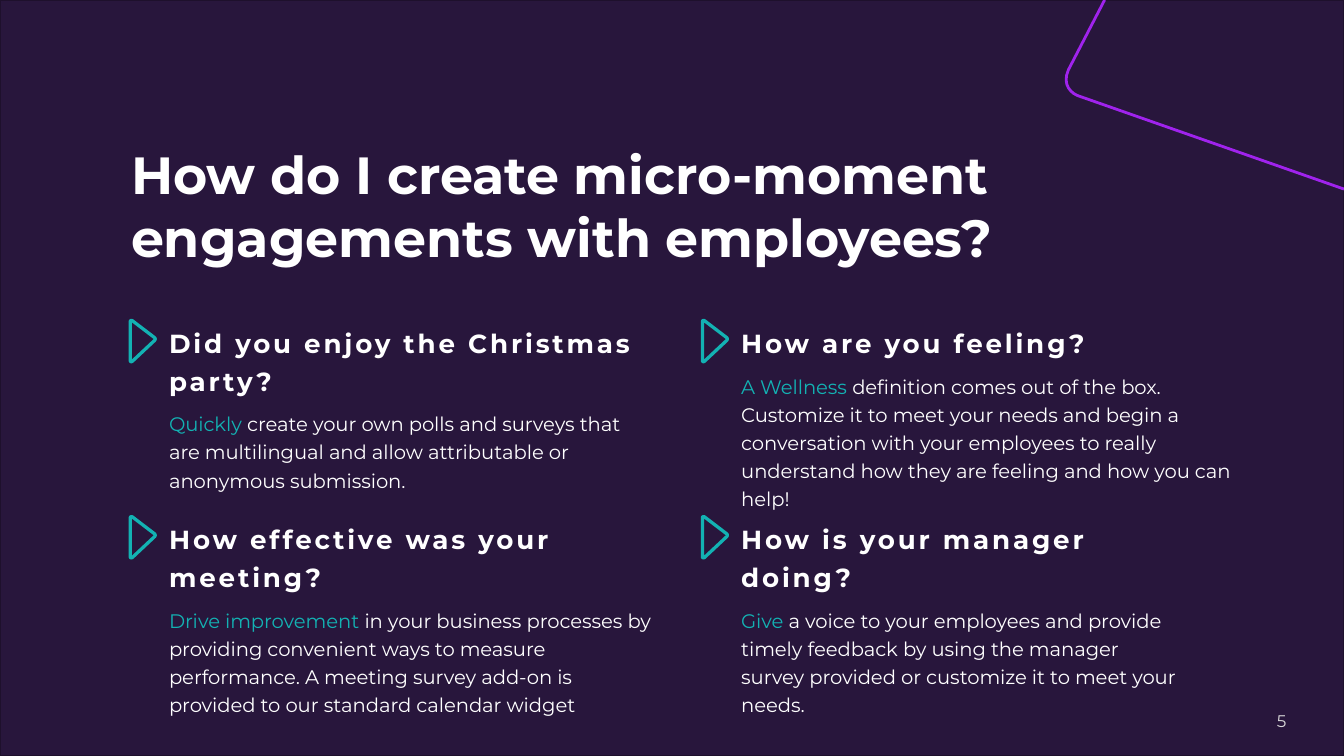
from pptx import Presentation
from pptx.dml.color import RGBColor
from pptx.enum.shapes import MSO_SHAPE
from pptx.enum.text import MSO_ANCHOR, MSO_AUTO_SIZE, PP_ALIGN
from pptx.util import Pt

RECT = MSO_SHAPE.RECTANGLE
GROW = MSO_AUTO_SIZE.SHAPE_TO_FIT_TEXT
MIDDLE = MSO_ANCHOR.MIDDLE
RIGHT = PP_ALIGN.RIGHT

NIGHT = RGBColor(0x28, 0x16, 0x3C)
EDGE = RGBColor(0x1E, 0x10, 0x2C)
VIOLET = RGBColor(0xA0, 0x23, 0xED)
TEAL = RGBColor(0x13, 0xB2, 0xB3)
WHITE = RGBColor(0xFF, 0xFF, 0xFF)
GREY = RGBColor(0xD9, 0xD9, 0xD9)
FONT = "Montserrat"

WIDE, HIGH = 720, 405
TITLE = "How do I create micro-moment engagements with employees?"
PAGE = "5"
CARDS = [
    ("Did you enjoy the Christmas party?", "Quickly\u00a0",
     "create your own polls and surveys that are multilingual and allow "
     "attributable or anonymous submission.", 270.7),
    ("How are you feeling?", "A Wellness ",
     "definition comes out of the box. Customize it to meet your needs and "
     "begin a conversation with your employees to really understand how they "
     "are feeling and how you can help!", 293.8),
    ("How effective was your meeting?", "Drive improvement ",
     "in your business processes by providing convenient ways to measure "
     "performance. A meeting survey add-on is provided to our standard "
     "calendar widget", 276.5),
    ("How is your manager doing?", "Give ",
     "a voice to your employees and provide timely feedback by using the "
     "manager survey provided or customize it to meet your needs.", 250.6),
]
LEFT, TOP = 83.5, 168.5
STEP_X, STEP_Y = 306.5, 105.1
ICON_X, ICON_Y = -13.7, 3

CORNER = [(591.8, 0), (572.4, 37.4),
          (568.8, 45.4, 573.8, 50.4, 578.9, 51.8), (WIDE, 101.3)]
ARROW = [(0, 21.6), (0, 22.5, 0.9, 22.5, 1.6, 21.6), (13, 10.9),
         (13.6, 10.3, 13.3, 9.6, 12.9, 9.3), (1.6, 0.7),
         (0.9, 0, 0, 0, 0, 0.9)]


def trace(steps, count=8):
    points = [steps[0]]
    for step in steps[1:]:
        if len(step) == 2:
            points.append(step)
            continue
        start, ends = points[-1], (step[:2], step[2:4], step[4:])
        for i in range(1, count + 1):
            t = i / count
            u = 1 - t
            points.append(tuple(
                u**3 * a + 3 * u * u * t * b + 3 * u * t * t * c + t**3 * d
                for a, b, c, d in zip(start, *ends)))
    return points


def outline(slide, steps, color, width, x=0, y=0, close=False):
    points = [(Pt(x + a), Pt(y + b)) for a, b in trace(steps)]
    pen = slide.shapes.build_freeform(*points[0])
    pen.add_line_segments(points[1:], close=close)
    shape = pen.convert_to_shape()
    shape.shadow.inherit = False
    shape.fill.background()
    shape.line.color.rgb = color
    shape.line.width = Pt(width)


def add_box(slide, x, y, w, h):
    box = slide.shapes.add_textbox(Pt(x), Pt(y), Pt(w), Pt(h))
    box.text_frame.word_wrap = True
    return box.text_frame


def add_run(para, text, size, color, bold=False):
    run = para.add_run()
    run.text = text
    run.font.name = FONT
    run.font.size = Pt(size)
    run.font.bold = bold
    run.font.color.rgb = color
    return run


def add_card(slide, x, y, head, lead, body, width):
    frame = add_box(slide, x, y, width, 78.5)
    frame.auto_size = GROW
    first, second = frame.paragraphs[0], frame.add_paragraph()
    for para in (first, second):
        para.line_spacing = 1.2
        para.space_after = Pt(6)
    run = add_run(first, head, 14, WHITE, True)
    run.font._element.set("spc", "150")
    add_run(second, lead, 10.5, TEAL)
    add_run(second, body, 10.5, WHITE)
    outline(slide, ARROW, TEAL, 1.75, x + ICON_X, y + ICON_Y, True)


def main():
    deck = Presentation()
    deck.slide_width, deck.slide_height = Pt(WIDE), Pt(HIGH)
    slide = deck.slides.add_slide(deck.slide_layouts[6])

    back = slide.shapes.add_shape(RECT, 0, 0, Pt(WIDE), Pt(HIGH))
    back.shadow.inherit = False
    back.fill.solid()
    back.fill.fore_color.rgb = NIGHT
    back.line.color.rgb = EDGE
    back.line.width = Pt(1)
    outline(slide, CORNER, VIOLET, 1.5)

    frame = add_box(slide, 64.8, 73.4, 585.4, 73.4)
    frame.auto_size = GROW
    frame.margin_left = frame.margin_right = Pt(5.4)
    frame.margin_top = frame.margin_bottom = Pt(2.7)
    add_run(frame.paragraphs[0], TITLE, 28, WHITE, True)

    for i, card in enumerate(CARDS):
        row, col = divmod(i, 2)
        add_card(slide, LEFT + col * STEP_X, TOP + row * STEP_Y, *card)

    frame = add_box(slide, 534.2, 375.1, 162, 21.6)
    frame.vertical_anchor = MIDDLE
    frame.paragraphs[0].alignment = RIGHT
    add_run(frame.paragraphs[0], PAGE, 9, GREY)

    deck.save("out.pptx")


if __name__ == "__main__":
    main()
